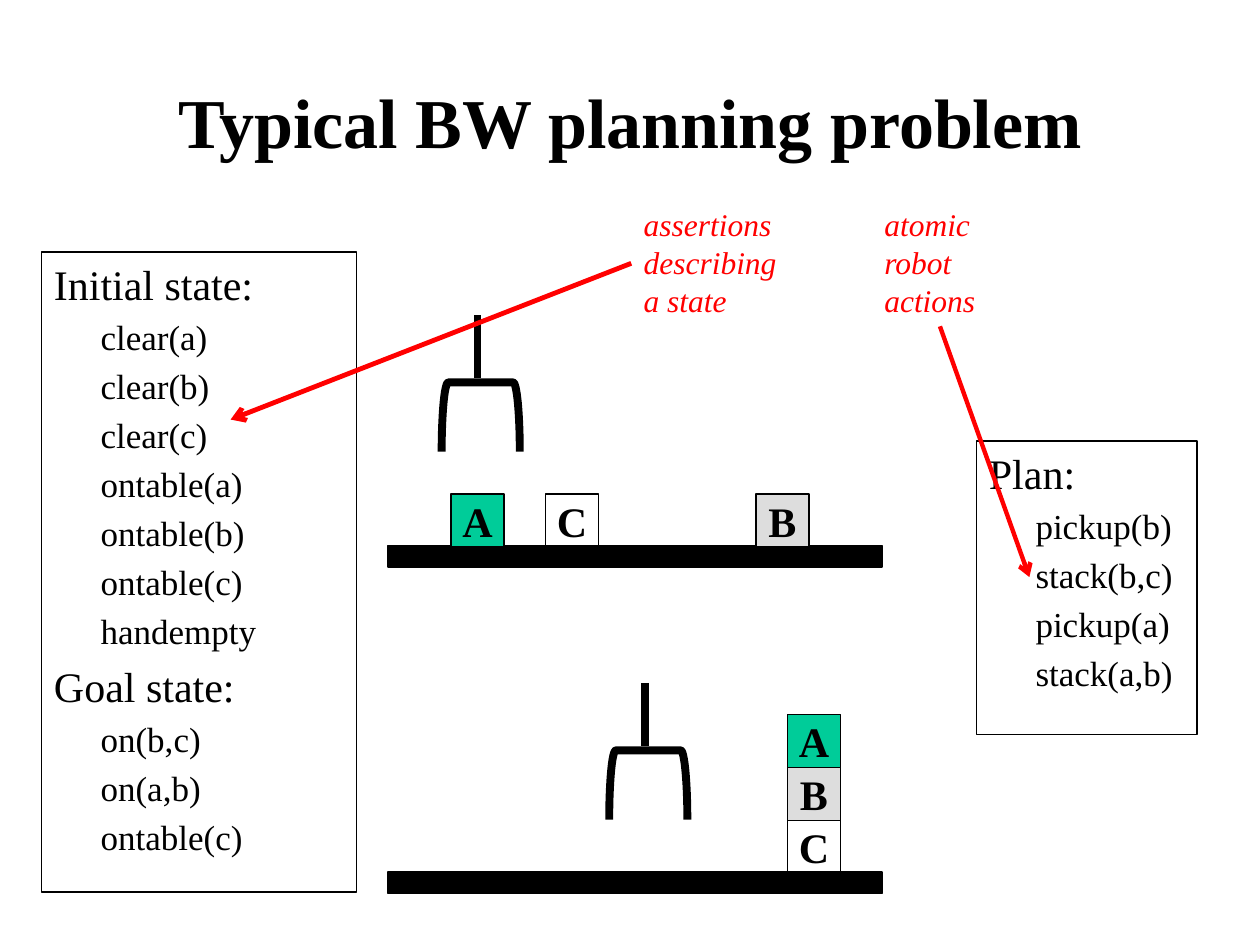
from dataclasses import dataclass

from lxml import etree
from pptx import Presentation
from pptx.dml.color import RGBColor
from pptx.enum.shapes import MSO_CONNECTOR, MSO_SHAPE
from pptx.enum.text import MSO_ANCHOR, MSO_AUTO_SIZE, PP_ALIGN
from pptx.oxml.ns import qn
from pptx.util import Inches, Pt

RECT = MSO_SHAPE.RECTANGLE
BRACKET = MSO_SHAPE.RIGHT_BRACKET
STRAIGHT = MSO_CONNECTOR.STRAIGHT
MIDDLE, TOP = MSO_ANCHOR.MIDDLE, MSO_ANCHOR.TOP
CENTER, LEFT = PP_ALIGN.CENTER, PP_ALIGN.LEFT
GROW = MSO_AUTO_SIZE.SHAPE_TO_FIT_TEXT


@dataclass(frozen=True)
class Theme:
    font: str = "Times New Roman"
    ink: str = "000000"
    red: str = "FF0000"
    green: str = "00CC99"
    gray: str = "DDDDDD"
    title: int = 40
    head: int = 24
    item: int = 20
    note: int = 18
    thin: float = 0.75
    thick: float = 4.5


@dataclass(frozen=True)
class Box:
    left: float
    top: float
    width: float
    height: float


@dataclass(frozen=True)
class Block:
    name: str
    left: float
    top: float


@dataclass(frozen=True)
class Scene:
    """A table with blocks on it and a robot hand above it."""
    table: float
    hand: tuple[float, float]
    blocks: list[Block]


@dataclass(frozen=True)
class Panel:
    box: Box
    lists: dict[str, list[str]]


@dataclass(frozen=True)
class Note:
    box: Box
    lines: list[str]


@dataclass(frozen=True)
class Arrow:
    start: tuple[float, float]
    end: tuple[float, float]
    weight: float


THEME = Theme()
SIDE = 0.42
FILLS = {"A": THEME.green, "B": THEME.gray, "C": None}
TITLE = Box(0.75, 0.33, 8.5, 1.25)
SCENES = [
    Scene(4.33, (3.79, 2.5),
          [Block("A", 3.58, 3.92), Block("B", 6, 3.92), Block("C", 4.33, 3.92)]),
    Scene(6.92, (5.12, 5.42),
          [Block(name, 6.25, 5.67 + row * SIDE)
           for row, name in enumerate("ABC")]),
]
PANELS = [
    Panel(Box(0.33, 2, 2.5, 5.08), {
        "Initial state:": ["clear(a)", "clear(b)", "clear(c)", "ontable(a)",
                           "ontable(b)", "ontable(c)", "handempty"],
        "Goal state:": ["on(b,c)", "on(a,b)", "ontable(c)"],
    }),
    Panel(Box(7.75, 3.5, 1.75, 2.33), {
        "Plan:": ["pickup(b)", "stack(b,c)", "pickup(a)", "stack(a,b)"],
    }),
]
NOTES = [
    Note(Box(5.01, 1.58, 1.32, 1.01), ["assertions", "describing", "a state"]),
    Note(Box(6.92, 1.58, 1.08, 1.01), ["atomic robot actions"]),
]
ARROWS = [
    Arrow((5.01, 2.09), (1.83, 3.33), 2.75),
    Arrow((7.46, 2.59), (8.17, 4.58), 2.5),
]


def place(box: Box) -> list[int]:
    return [Inches(n) for n in (box.left, box.top, box.width, box.height)]


def add_run(para, text: str, size: int, color: str = THEME.ink,
            bold: bool = False, italic: bool = False) -> None:
    run = para.add_run()
    run.text = text
    font = run.font
    font.name, font.size = THEME.font, Pt(size)
    font.bold, font.italic = bold, italic
    font.color.rgb = RGBColor.from_string(color)


def add_shape(shapes, kind, box: Box, fill: str | None = None,
              weight: float = THEME.thin):
    shape = shapes.add_shape(kind, *place(box))
    shape.shadow.inherit = False
    if fill:
        shape.fill.solid()
        shape.fill.fore_color.rgb = RGBColor.from_string(fill)
    else:
        shape.fill.background()
    shape.line.color.rgb = RGBColor.from_string(THEME.ink)
    shape.line.width = Pt(weight)
    return shape


def add_line(shapes, start: tuple[float, float], end: tuple[float, float],
             color: str, weight: float, head: bool = False) -> None:
    line = shapes.add_connector(STRAIGHT, *[Inches(n) for n in start + end])
    line.line.color.rgb = RGBColor.from_string(color)
    line.line.width = Pt(weight)
    props = line._element.spPr
    if head:
        etree.SubElement(props.find(qn("a:ln")), qn("a:tailEnd"), type="arrow")
    etree.SubElement(props, qn("a:effectLst"))


def add_hand(shapes, left: float, top: float) -> None:
    palm = Box(left - 0.25, top + 0.5, 0.55, 0.62)
    grip = add_shape(shapes, BRACKET, palm, weight=THEME.thick)
    grip.rotation = 270
    grip.adjustments[0] = 0.095
    add_line(shapes, (left, top), (left, top + 0.5), THEME.ink, THEME.thick)


def add_scene(slide, scene: Scene) -> None:
    shapes = slide.shapes.add_group_shape().shapes
    add_shape(shapes, RECT, Box(3.08, scene.table, 3.92, 0.17), THEME.ink)
    for block in scene.blocks:
        box = Box(block.left, block.top, SIDE, SIDE)
        frame = add_shape(shapes, RECT, box, FILLS[block.name]).text_frame
        frame.word_wrap = False
        frame.vertical_anchor = MIDDLE
        para = frame.paragraphs[0]
        para.alignment = CENTER
        add_run(para, block.name, THEME.head, bold=True)
    add_hand(shapes, *scene.hand)


def set_indent(para, left: float) -> None:
    """Hang the first line and put a fifth of a line above it."""
    props = para._p.get_or_add_pPr()
    props.set("marL", str(Inches(left)))
    props.set("indent", str(-Inches(0.25)))
    above = etree.SubElement(props, qn("a:spcBef"))
    etree.SubElement(above, qn("a:spcPct"), val="20000")


def add_panel(slide, panel: Panel) -> None:
    frame = add_shape(slide.shapes, RECT, panel.box).text_frame
    frame.word_wrap = True
    frame.vertical_anchor = TOP
    rows = [(text, level) for head, items in panel.lists.items()
            for text, level in [(head, 0)] + [(item, 1) for item in items]]
    for index, (text, level) in enumerate(rows):
        para = frame.add_paragraph() if index else frame.paragraphs[0]
        para.level = level
        para.alignment = LEFT
        set_indent(para, 0.62 if level else 0.25)
        add_run(para, text, THEME.item if level else THEME.head)


def add_note(slide, note: Note) -> None:
    frame = slide.shapes.add_textbox(*place(note.box)).text_frame
    frame.word_wrap = True
    frame.auto_size = GROW
    para = frame.paragraphs[0]
    for index, text in enumerate(note.lines):
        if index:
            para.add_line_break()
        add_run(para, text, THEME.note, THEME.red, italic=True)


def add_title(slide, text: str) -> None:
    frame = slide.shapes.add_textbox(*place(TITLE)).text_frame
    frame.word_wrap = True
    frame.vertical_anchor = MIDDLE
    para = frame.paragraphs[0]
    para.alignment = CENTER
    add_run(para, text, THEME.title, bold=True)


def main() -> None:
    deck = Presentation()
    deck.slide_width, deck.slide_height = Inches(10), Inches(7.5)
    slide = deck.slides.add_slide(deck.slide_layouts[6])
    add_title(slide, "Typical BW planning problem")
    for scene in SCENES:
        add_scene(slide, scene)
    for panel in PANELS:
        add_panel(slide, panel)
    for note in NOTES:
        add_note(slide, note)
    for arrow in ARROWS:
        add_line(slide.shapes, arrow.start, arrow.end, THEME.red, arrow.weight, True)
    deck.save("out.pptx")


if __name__ == "__main__":
    main()
